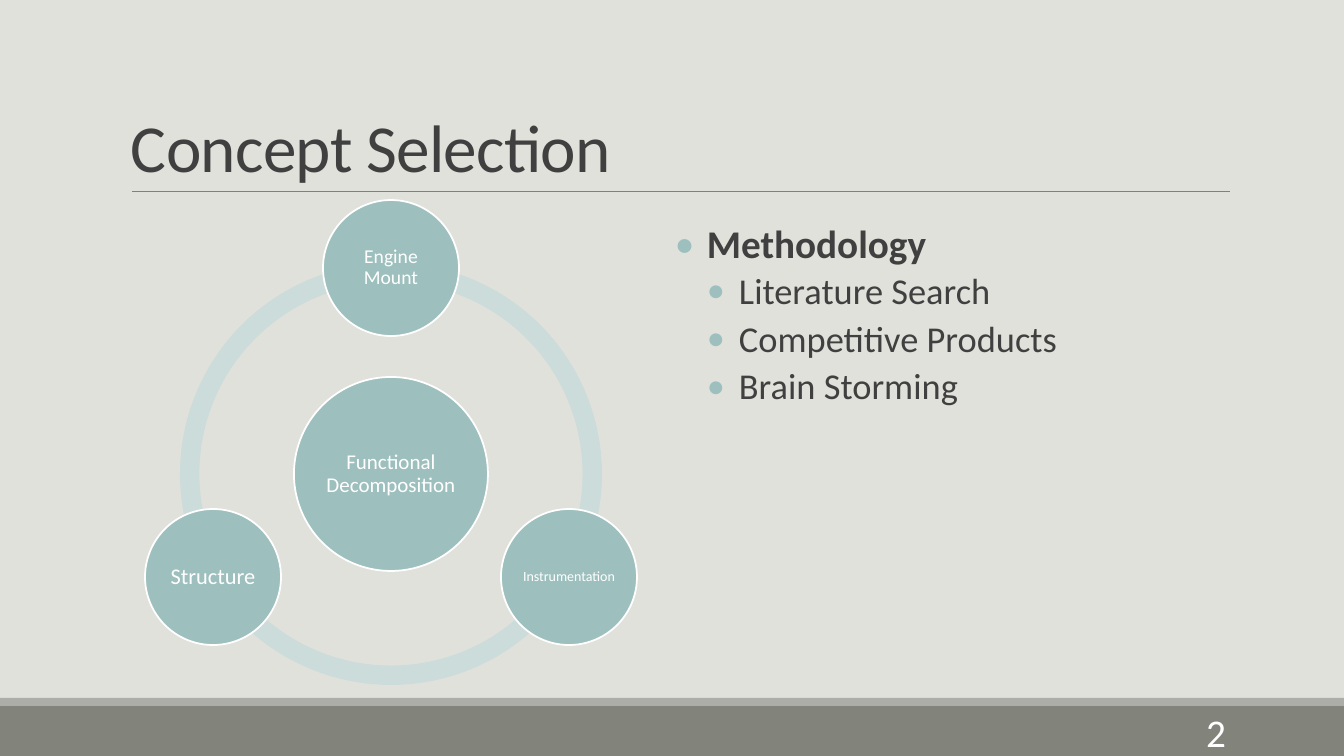
import math
from dataclasses import dataclass

from lxml import etree
from pptx import Presentation
from pptx import util as u
from pptx.dml.color import RGBColor
from pptx.enum import shapes, text
from pptx.oxml.ns import qn

EMU_PER_PX = 12192000 / 1344


@dataclass(frozen=True)
class Theme:
    font: str = "Calibri"
    background: str = "E1E1DB"
    footer: str = "82847C"
    footer_edge: str = "ACADA8"
    rule: str = "808080"
    ring: str = "CCDCDB"
    accent: str = "9DBFBE"
    white: str = "FFFFFF"
    ink: str = "404040"
    title_pt: int = 48
    heading_pt: int = 28
    item_pt: int = 26
    number_pt: int = 28


@dataclass(frozen=True)
class Box:
    x: int
    y: int
    w: int
    h: int


@dataclass(frozen=True)
class Node:
    label: str
    size: int
    angle: int
    inset: int = 2


@dataclass(frozen=True)
class Bullet:
    label: str
    size: int
    level: int
    before: int
    after: int
    bold: bool = False


THEME = Theme()
CENTER_X, CENTER_Y = 391, 474
RING_D, HUB_D, NODE_D, ORBIT = 422, 194, 136, 206
RING_THICKNESS = 0.046
INDENT = 32

BANDS = [(Box(0, 706, 1344, 50), THEME.footer),
         (Box(0, 698, 1344, 8), THEME.footer_edge)]
ARCS = [(90, 162), (18, 90), (162, 18)]
HUB = Node("Functional Decomposition", 15, 0)
NODES = [Node("Engine Mount", 14, 270),
         Node("Instrumentation", 10, 30, 1),
         Node("Structure", 16, 150)]
BULLETS = [Bullet("Methodology", THEME.heading_pt, 0, 0, 2, True)] + [
    Bullet(label, THEME.item_pt, 1, 2, 4)
    for label in ("Literature Search", "Competitive Products", "Brain Storming")]


def px(n: float) -> u.Emu:
    return u.Emu(round(n * EMU_PER_PX))


def rgb(value: str) -> RGBColor:
    return RGBColor.from_string(value)


def place(box: Box) -> list:
    return [px(n) for n in (box.x, box.y, box.w, box.h)]


def centered(x: float, y: float, d: int) -> Box:
    return Box(round(x - d / 2), round(y - d / 2), d, d)


def assign(target, values: dict) -> None:
    for name, value in values.items():
        setattr(target, name, value)


def add_run(p, label: str, size: int, color: str, bold: bool = False):
    r = p.add_run()
    r.text = label
    assign(r.font, {"name": THEME.font, "size": u.Pt(size), "bold": bold})
    r.font.color.rgb = rgb(color)
    return r


def set_frame(tf, anchor, insets: tuple) -> None:
    sides = ("margin_left", "margin_top", "margin_right", "margin_bottom")
    assign(tf, {"word_wrap": True, "vertical_anchor": anchor,
                **{side: px(n) for side, n in zip(sides, insets)}})


def add_text_box(s, box: Box, anchor, insets: tuple = (10, 5, 10, 5)):
    tf = s.shapes.add_textbox(*place(box)).text_frame
    set_frame(tf, anchor, insets)
    return tf


def add_filled(s, kind, box: Box, color: str, outline: str = ""):
    sp = s.shapes.add_shape(kind, *place(box))
    sp.shadow.inherit = False
    sp.fill.solid()
    sp.fill.fore_color.rgb = rgb(color)
    if outline:
        sp.line.color.rgb = rgb(outline)
        sp.line.width = u.Pt(1.25)
    else:
        sp.line.fill.background()
    return sp


def add_circle(s, node: Node, box: Box) -> None:
    sp = add_filled(s, shapes.MSO_SHAPE.OVAL, box, THEME.accent, THEME.white)
    tf = sp.text_frame
    set_frame(tf, text.MSO_ANCHOR.MIDDLE, (node.inset,) * 4)
    p = tf.paragraphs[0]
    assign(p, {"alignment": text.PP_ALIGN.CENTER, "line_spacing": 0.9})
    add_run(p, node.label, node.size, THEME.white)


def add_arc(s, start: int, end: int) -> None:
    sp = add_filled(s, shapes.MSO_SHAPE.BLOCK_ARC,
                    centered(CENTER_X, CENTER_Y, RING_D), THEME.ring)
    for i, value in enumerate((start * 0.6, end * 0.6, RING_THICKNESS)):
        sp.adjustments[i] = value


def add_diagram(s) -> None:
    for start, end in ARCS:
        add_arc(s, start, end)
    add_circle(s, HUB, centered(CENTER_X, CENTER_Y, HUB_D))
    for node in NODES:
        a = math.radians(node.angle)
        add_circle(s, node, centered(CENTER_X + ORBIT * math.cos(a),
                                     CENTER_Y + ORBIT * math.sin(a), NODE_D))


def add_rule(s) -> None:
    c = s.shapes.add_connector(shapes.MSO_CONNECTOR.STRAIGHT,
                               px(132), px(191), px(1230), px(191))
    c.line.color.rgb = rgb(THEME.rule)
    c.line.width = u.Pt(0.5)
    etree.SubElement(c._element.spPr, qn("a:effectLst"))


def add_title(s) -> None:
    tf = add_text_box(s, Box(121, 31, 1109, 160), text.MSO_ANCHOR.BOTTOM)
    p = tf.paragraphs[0]
    p.line_spacing = 0.85
    r = add_run(p, "Concept Selection", THEME.title_pt, THEME.ink)
    r.font._element.set("spc", "-50")


def add_bullets(s) -> None:
    tf = add_text_box(s, Box(675, 220, 529, 281), text.MSO_ANCHOR.TOP, (0, 5, 0, 5))
    for i, b in enumerate(BULLETS):
        p = tf.paragraphs[0] if i == 0 else tf.add_paragraph()
        pPr = p._p.get_or_add_pPr()
        pPr.set("marL", str(px(INDENT * (b.level + 1))))
        pPr.set("indent", str(px(-INDENT)))
        clr = etree.SubElement(pPr, qn("a:buClr"))
        etree.SubElement(clr, qn("a:srgbClr"), val=THEME.accent)
        etree.SubElement(pPr, qn("a:buFont"), typeface=THEME.font)
        etree.SubElement(pPr, qn("a:buChar"), char="•")
        assign(p, {"level": b.level, "line_spacing": 0.9,
                   "space_before": u.Pt(b.before), "space_after": u.Pt(b.after)})
        add_run(p, b.label, b.size, THEME.ink, b.bold)


def add_page_number(s) -> None:
    tf = add_text_box(s, Box(1092, 712, 144, 40), text.MSO_ANCHOR.MIDDLE)
    p = tf.paragraphs[0]
    p.alignment = text.PP_ALIGN.RIGHT
    add_run(p, "2", THEME.number_pt, THEME.white)


def main() -> None:
    prs = Presentation()
    assign(prs, {"slide_width": px(1344), "slide_height": px(756)})
    s = prs.slides.add_slide(prs.slide_layouts[6])
    s.background.fill.solid()
    s.background.fill.fore_color.rgb = rgb(THEME.background)
    for box, color in BANDS:
        add_filled(s, shapes.MSO_SHAPE.RECTANGLE, box, color)
    add_rule(s)
    add_diagram(s)
    add_title(s)
    add_bullets(s)
    add_page_number(s)
    prs.save("out.pptx")


if __name__ == "__main__":
    main()
